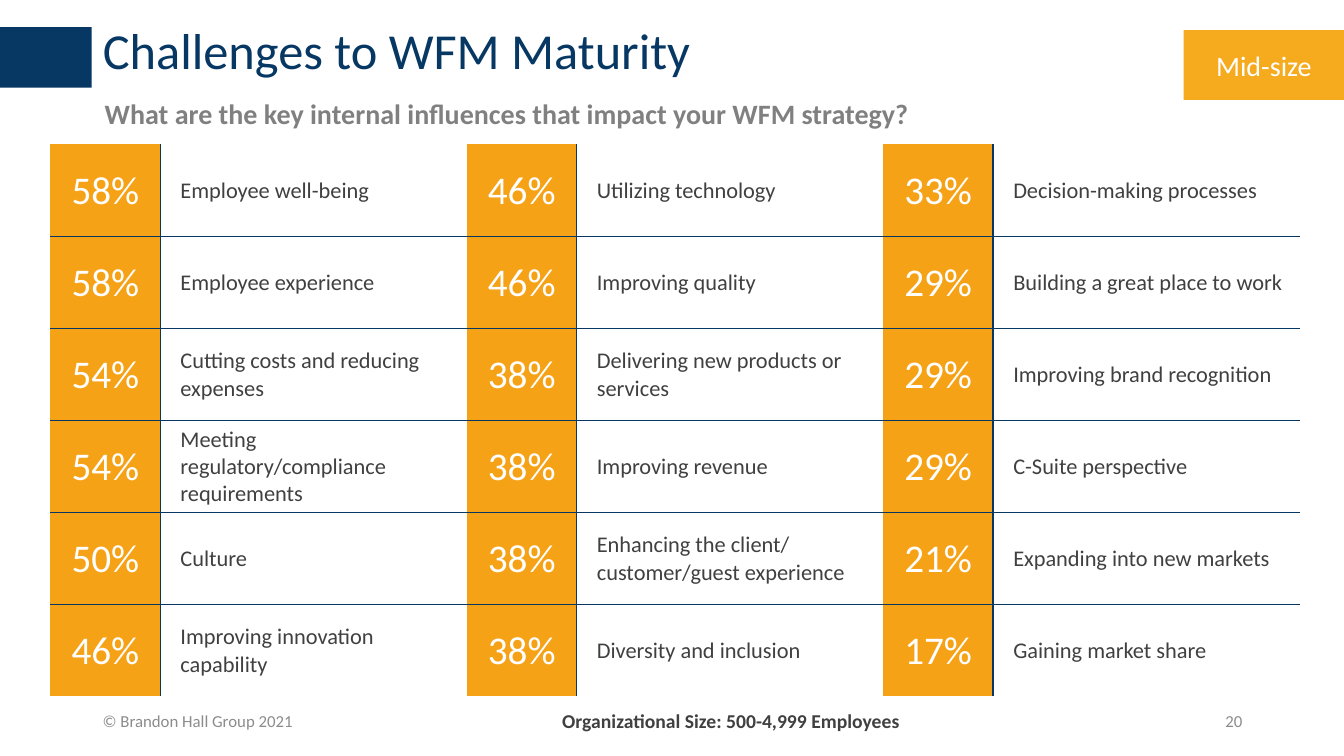
from lxml.etree import SubElement
from pptx import Presentation
from pptx.dml.color import RGBColor
from pptx.enum.shapes import MSO_SHAPE as Shape
from pptx.enum.text import MSO_ANCHOR as Anchor, MSO_AUTO_SIZE as Auto, PP_ALIGN as Align
from pptx.oxml.ns import qn
from pptx.util import Inches, Pt

TITLE = "Challenges to WFM Maturity"
QUESTION = "What are the key internal influences that impact your WFM strategy?"
TAG = "Mid-size"
SIZE_NOTE = "Organizational Size: 500-4,999 Employees"
RIGHTS = "© Brandon Hall Group 2021"
PAGE = "20"
GROUPS = [
    [("58%", "Employee well-being"),
     ("58%", "Employee experience"),
     ("54%", "Cutting costs and reducing expenses"),
     ("54%", "Meeting regulatory/compliance requirements"),
     ("50%", "Culture"),
     ("46%", "Improving innovation capability")],
    [("46%", "Utilizing technology"),
     ("46%", "Improving quality"),
     ("38%", "Delivering new products or services"),
     ("38%", "Improving revenue"),
     ("38%", "Enhancing the client/\ncustomer/guest experience"),
     ("38%", "Diversity and inclusion")],
    [("33%", "Decision-making processes"),
     ("29%", "Building a great place to work"),
     ("29%", "Improving brand recognition"),
     ("29%", "C-Suite perspective"),
     ("21%", "Expanding into new markets"),
     ("17%", "Gaining market share")],
]
NAVY, ORANGE, AMBER = "073763", "F6A217", "F6AB1E"
WHITE, DARK, GRAY, PALE = "FFFFFF", "404040", "808080", "8C8C8C"
LEFT, TOP, STEP = 0.5, 1.43, 4.13
COLS, ROW = (1.09, 3.04), 0.913
PLAIN_STYLE = "{2D5ABB26-0587-4C30-8999-92F81FD0307C}"


def color(code):
    return RGBColor.from_string(code)


def write(frame, text, size, ink, bold=False, align=Align.LEFT, space=None):
    frame.text = text
    for para in frame.paragraphs:
        para.alignment = align
        para.line_spacing = space
        for run in para.runs:
            font = run.font
            font.name, font.size, font.bold = "Calibri", Pt(size), bold
            font.color.rgb = color(ink)


def label(box, text, size, ink, anchor=Anchor.TOP, grow=False, **style):
    frame = slide.shapes.add_textbox(*map(Inches, box)).text_frame
    frame.word_wrap = True
    frame.vertical_anchor = anchor
    if grow:
        frame.auto_size = Auto.SHAPE_TO_FIT_TEXT
    write(frame, text, size, ink, **style)


def block(box, fill):
    shape = slide.shapes.add_shape(Shape.RECTANGLE, *map(Inches, box))
    shape.shadow.inherit = False
    shape.fill.solid()
    shape.fill.fore_color.rgb = color(fill)
    shape.line.fill.background()
    return shape


def rule(cell, sides):
    """Draw thin navy borders on the given sides, in L, R, T, B order."""
    props = cell._tc.get_or_add_tcPr()
    for side in sides:
        line = SubElement(props, qn("a:ln" + side), w=str(Pt(1)))
        fill = SubElement(line, qn("a:solidFill"))
        SubElement(fill, qn("a:srgbClr"), val=NAVY)


def add_group(left, rows):
    box = (left, TOP, sum(COLS), ROW * len(rows))
    table = slide.shapes.add_table(len(rows), 2, *map(Inches, box)).table
    table.first_row = table.horz_banding = False
    table._tbl.tblPr.find(qn("a:tableStyleId")).text = PLAIN_STYLE
    for col, width in zip(table.columns, COLS):
        col.width = Inches(width)
    for r, row in enumerate(rows):
        table.rows[r].height = Inches(ROW)
        edges = ("T" if r else "") + ("B" if r < len(rows) - 1 else "")
        for c, text in enumerate(row):
            cell = table.cell(r, c)
            rule(cell, "RL"[c] + edges)
            cell.vertical_anchor = Anchor.MIDDLE
            cell.margin_left = Inches((0.01, 0.2)[c])
            cell.margin_right = cell.margin_top = Inches(0.01)
            cell.margin_bottom = 0
            if c:
                cell.fill.background()
                write(cell.text_frame, text, 16, DARK)
            else:
                cell.fill.solid()
                cell.fill.fore_color.rgb = color(ORANGE)
                write(cell.text_frame, text, 28, WHITE, align=Align.CENTER)


deck = Presentation()
deck.slide_width, deck.slide_height = Inches(13.33), Inches(7.5)
slide = deck.slides.add_slide(deck.slide_layouts[5])

block((0, 0.27, 0.91, 0.6), NAVY)
title = slide.shapes.title
title.left, title.top, title.width, title.height = map(Inches, (0.92, 0.21, 11.5, 2.19))
title.text_frame.vertical_anchor = Anchor.TOP
title.text_frame.auto_size = Auto.NONE
write(title.text_frame, TITLE, 36, NAVY, space=0.9)

tag = block((11.74, 0.3, 1.59, 0.69), AMBER).text_frame
tag.vertical_anchor = Anchor.MIDDLE
write(tag, TAG, 20, WHITE, align=Align.CENTER)
label((0.94, 0.91, 8.5, 0.44), QUESTION, 20, GRAY, grow=True, bold=True)

for i, rows in enumerate(GROUPS):
    add_group(LEFT + i * STEP, rows)

label((0.92, 6.95, 4.5, 0.4), RIGHTS, 12, PALE, anchor=Anchor.MIDDLE)
label((4.59, 6.98, 5.32, 0.34), SIZE_NOTE, 14, DARK, grow=True, bold=True, align=Align.CENTER)
label((9.42, 6.95, 3, 0.4), PAGE, 12, PALE, anchor=Anchor.MIDDLE, align=Align.RIGHT)

deck.save("out.pptx")
